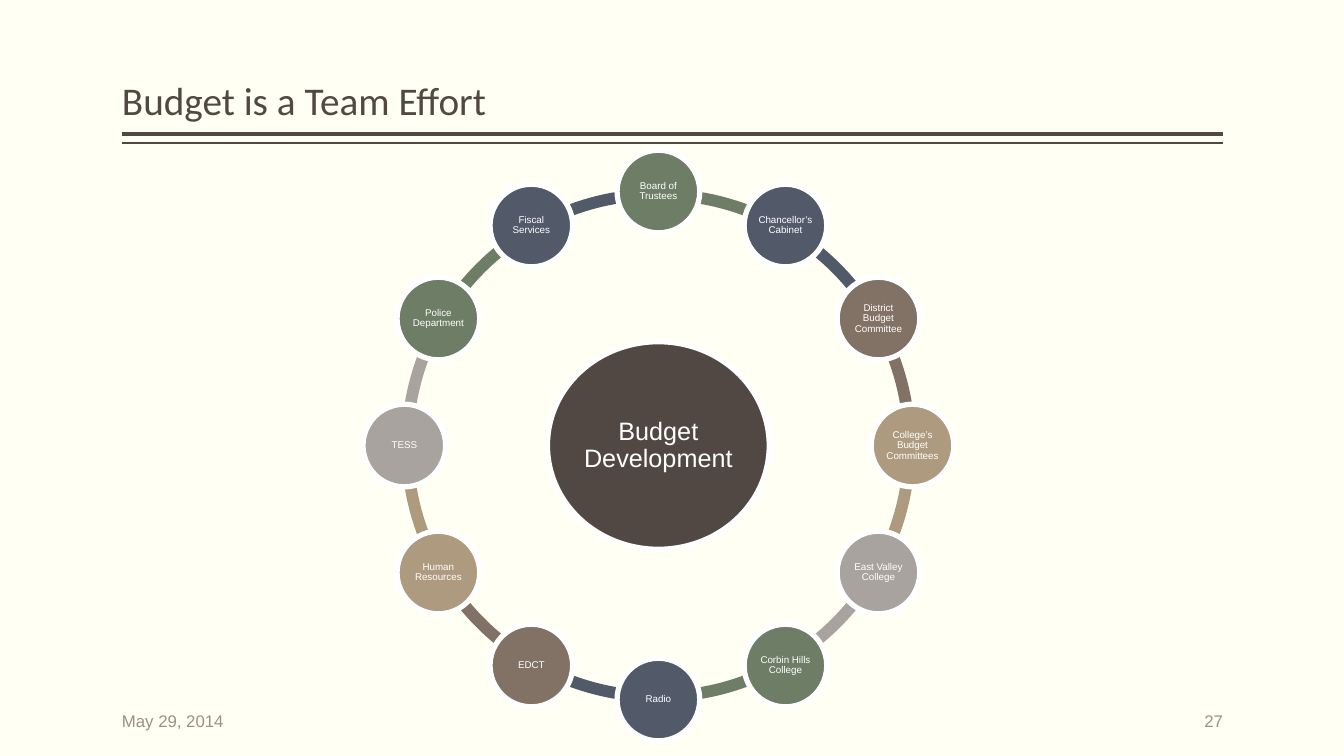
import math

from lxml import etree
from pptx import Presentation
from pptx.dml.color import RGBColor
from pptx.enum import shapes, text
from pptx.oxml import ns
from pptx.util import Inches, Pt

COLORS = {
    "paper": "FFFFF3", "dark": "514843", "white": "FFFFFF", "muted": "9D8F88",
    "green": "6D7D66", "slate": "525A6A", "brown": "827266",
    "tan": "AE9A7E", "gray": "A8A39E",
}
CYCLE = ["green", "slate", "brown", "tan", "gray"]
# Clockwise from the top
TEAMS = [
    "Board of Trustees", "Chancellor’s Cabinet", "District Budget Committee",
    "College’s Budget Committees", "East Valley College", "Corbin Hills College",
    "Radio", "EDCT", "Human Resources", "TESS", "Police Department", "Fiscal Services",
]
CENTER_X, CENTER_Y = 6.53, 4.42
ORBIT, RING_SIZE, NODE_SIZE = 2.52, 5.1, 0.82
LEFT, RIGHT = 1.21, 12.13


def color(name):
    return RGBColor.from_string(COLORS[name])


def write(shape, words, size, ink, align, anchor, insets, font="Arial", spacing=None):
    frame = shape.text_frame
    frame.word_wrap = True
    frame.vertical_anchor = anchor
    frame.margin_left = frame.margin_right = Inches(insets[0])
    frame.margin_top = frame.margin_bottom = Inches(insets[1])
    para = frame.paragraphs[0]
    para.text = words
    para.alignment = align
    para.line_spacing = spacing
    para.font.size = Pt(size)
    para.font.name = font
    para.font.color.rgb = color(ink)


def add_label(page, box, words, size, ink, align=text.PP_ALIGN.LEFT,
              anchor=text.MSO_ANCHOR.MIDDLE, **style):
    label = page.shapes.add_textbox(*map(Inches, box))
    write(label, words, size, ink, align, anchor, (0, 0.05), **style)


def add_rule(page, y, weight):
    rule = page.shapes.add_connector(
        shapes.MSO_CONNECTOR.STRAIGHT, Inches(LEFT), Inches(y), Inches(RIGHT), Inches(y))
    rule.line.color.rgb = color("dark")
    rule.line.width = Pt(weight)
    etree.SubElement(rule._element.spPr, ns.qn("a:effectLst"))


def add_centered(page, kind, x, y, width, height, fill):
    shape = page.shapes.add_shape(
        kind, Inches(x - width / 2), Inches(y - height / 2), Inches(width), Inches(height))
    shape.shadow.inherit = False
    shape.fill.solid()
    shape.fill.fore_color.rgb = color(fill)
    return shape


def add_arc(page, start, end, fill):
    arc = add_centered(page, shapes.MSO_SHAPE.BLOCK_ARC, CENTER_X, CENTER_Y,
                       RING_SIZE, RING_SIZE, fill)
    arc.line.fill.background()
    # One degree is 60000 units, and adjustments count in 100000
    arc.adjustments[0] = start % 360 * 0.6
    arc.adjustments[1] = end % 360 * 0.6
    arc.adjustments[2] = 0.023


def add_circle(page, x, y, width, height, fill, words, size, inset):
    circle = add_centered(page, shapes.MSO_SHAPE.OVAL, x, y, width, height, fill)
    circle.line.color.rgb = color("white")
    circle.line.width = Pt(3.78)
    write(circle, words, size, "white", text.PP_ALIGN.CENTER, text.MSO_ANCHOR.MIDDLE,
          (inset, inset), spacing=0.9)


def add_team_ring(page):
    step = 360 / len(TEAMS)
    nodes = [(team, CYCLE[i % len(CYCLE)], i * step - 90) for i, team in enumerate(TEAMS)]
    for team, fill, angle in nodes:
        add_arc(page, angle, angle + step, fill)
    add_circle(page, CENTER_X, CENTER_Y, 2.2, 2.06, "dark", "Budget Development", 18, 0.03)
    for team, fill, angle in nodes:
        x = CENTER_X + ORBIT * math.cos(math.radians(angle))
        y = CENTER_Y + ORBIT * math.sin(math.radians(angle))
        add_circle(page, x, y, NODE_SIZE, NODE_SIZE, fill, team, 7, 0.01)


def main():
    deck = Presentation()
    deck.slide_width, deck.slide_height = Inches(13.33), Inches(7.5)
    page = deck.slides.add_slide(deck.slide_layouts[6])
    page.background.fill.solid()
    page.background.fill.fore_color.rgb = color("paper")

    # Title and double rule
    add_rule(page, 1.33, 3)
    add_rule(page, 1.42, 1)
    add_label(page, (LEFT, 0.08, RIGHT - LEFT, 1.2), "Budget is a Team Effort", 28, "dark",
              anchor=text.MSO_ANCHOR.BOTTOM, font="Calibri", spacing=0.9)

    # Teams around the budget
    add_team_ring(page)

    # Footer
    add_label(page, (RIGHT - 2, 6.95, 2, 0.4), "27", 12, "muted", text.PP_ALIGN.RIGHT)
    add_label(page, (LEFT, 6.95, 2, 0.4), "May 29, 2014", 12, "muted")
    deck.save("out.pptx")


if __name__ == "__main__":
    main()
